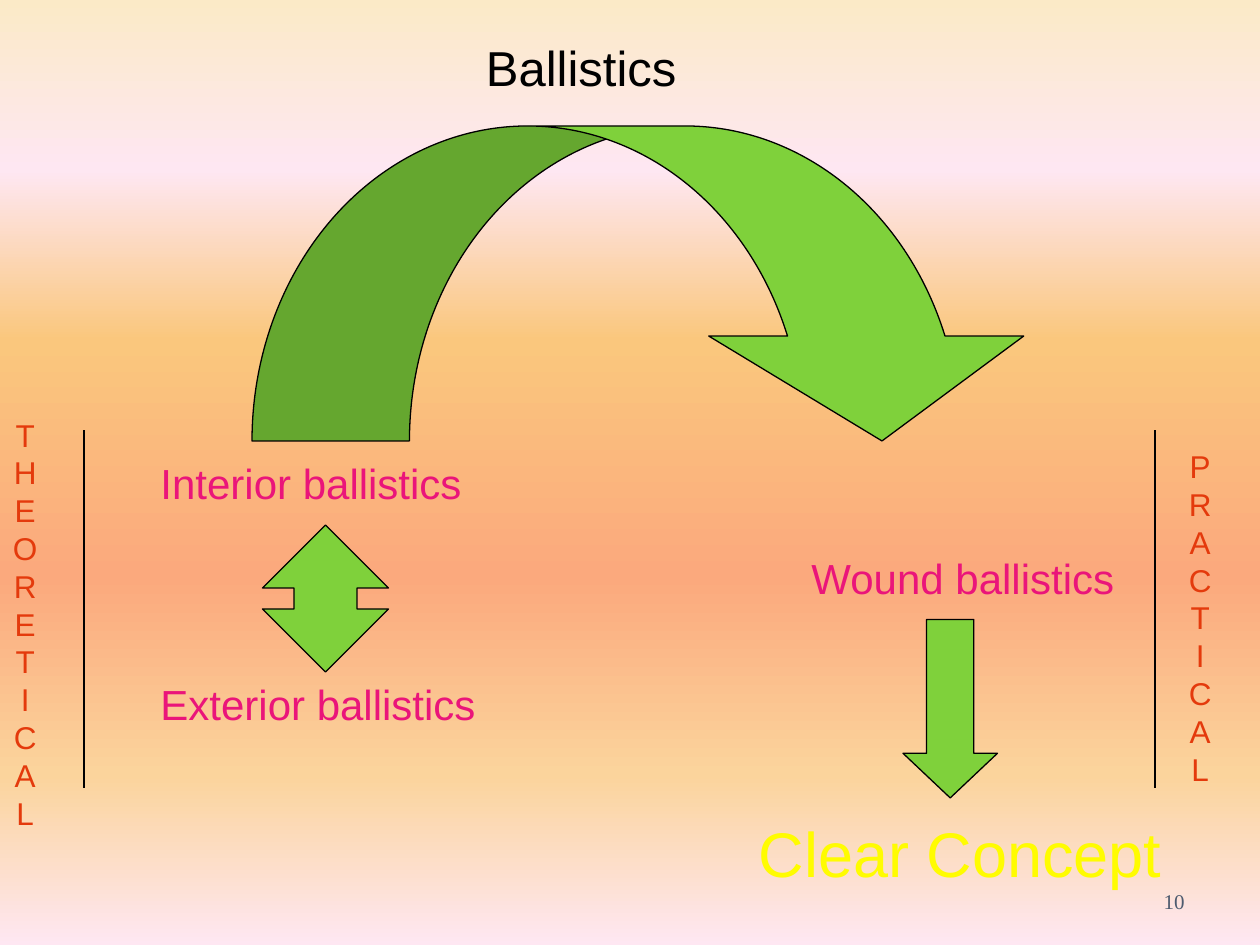
import pptx
import pptx.util
import pptx.dml.color
import pptx.enum.shapes
import pptx.enum.text
import lxml.etree
from pptx.oxml.ns import qn

Pt = pptx.util.Pt
SHAPES = pptx.enum.shapes.MSO_SHAPE
ALIGN = pptx.enum.text.PP_ALIGN

presentation = pptx.Presentation()
presentation.slide_width = pptx.util.Inches(10)
presentation.slide_height = pptx.util.Inches(7.5)
slide = presentation.slides.add_slide(presentation.slide_layouts[6])

# Grid of 120 columns by 90 rows; the cells are square.
CELL = presentation.slide_width // 120


def color(hex_string):
    return pptx.dml.color.RGBColor.from_string(hex_string)


def add_label(lines, box, size, ink, align=ALIGN.LEFT, font="Arial"):
    """Add a text box, one paragraph per line; box is in grid cells."""
    shape = slide.shapes.add_textbox(*[round(n * CELL) for n in box])
    frame = shape.text_frame
    frame.word_wrap = False
    for index, line in enumerate(lines):
        paragraph = frame.paragraphs[0] if index == 0 else frame.add_paragraph()
        paragraph.alignment = align
        if len(lines) > 1:
            paragraph.line_spacing = Pt(size * 1.2)
        run = paragraph.add_run()
        run.text = line
        run.font.size = Pt(size)
        run.font.name = font
        run.font.color.rgb = color(ink)
    return shape


# Background gradient, top to bottom
fill = slide.background.fill
fill.gradient()
fill.gradient_angle = 270
stop_list = slide.element.find(".//" + qn("a:gsLst"))
for stop in list(stop_list):
    stop_list.remove(stop)
for percent, hex_string in [(0, "FBEAC7"), (18, "FEE7F2"), (36, "FAC77D"),
                            (61, "FBA97D"), (82, "FBD49C"), (100, "FEE7F2")]:
    stop = lxml.etree.SubElement(stop_list, qn("a:gs"), pos=str(percent * 1000))
    lxml.etree.SubElement(stop, qn("a:srgbClr"), val=hex_string)

# Slide number
number = add_label(["10"], (86, 83.4, 28, 4.8), 12, "4E5B6F", ALIGN.RIGHT, "Times New Roman")
number.text_frame.word_wrap = True
number.text_frame.vertical_anchor = pptx.enum.text.MSO_ANCHOR.MIDDLE

# Headings, in boxes that fit their single line
for text, box, size, ink in [
    ("Ballistics", (45.1, 3, 21, 6.8), 28, "000000"),
    ("Interior ballistics", (14.1, 43, 32, 6), 24, "EA157A"),
    ("Exterior ballistics", (14.1, 64, 33, 6), 24, "EA157A"),
    ("Wound ballistics", (76.1, 52, 32, 6), 24, "EA157A"),
    ("Clear Concept", (71.1, 77, 41, 8.4), 36, "FFFC00"),
]:
    heading = add_label([text], box, size, ink)
    heading.text_frame.auto_size = pptx.enum.text.MSO_AUTO_SIZE.SHAPE_TO_FIT_TEXT

# Vertical side words, one letter a line, each with its rule
for word, box, rule_column in [
    ("THEORETICAL", (0, 39, 4.8, 40.8), 8),
    ("PRACTICAL", (112, 42, 4.6, 33.6), 110),
]:
    add_label(list(word), box, 18, "E43A0C", ALIGN.CENTER)
    rule = slide.shapes.add_connector(
        pptx.enum.shapes.MSO_CONNECTOR.STRAIGHT,
        rule_column * CELL, 41 * CELL, rule_column * CELL, 75 * CELL)
    rule.line.color.rgb = color("000000")
    rule.line.width = Pt(0.75)
    lxml.etree.SubElement(rule.element.spPr, qn("a:effectLst"))

# Green block arrows; the double arrow takes its head length first, then its shaft width
for kind, box, adjustments in [
    (SHAPES.CURVED_DOWN_ARROW, (24, 12, 75, 30), (0.5, 1, 0.333)),
    (SHAPES.UP_DOWN_ARROW, (25, 50, 12, 14), (0.233, 0.5)),
    (SHAPES.DOWN_ARROW, (86, 59, 9, 17), (0.5, 0.472)),
]:
    arrow = slide.shapes.add_shape(kind, *[n * CELL for n in box])
    for index, value in enumerate(adjustments):
        arrow.adjustments[index] = value
    arrow.shadow.inherit = False
    arrow.fill.solid()
    arrow.fill.fore_color.rgb = color("7FD13B")
    arrow.line.color.rgb = color("000000")
    arrow.line.width = Pt(0.75)

presentation.save("out.pptx")
